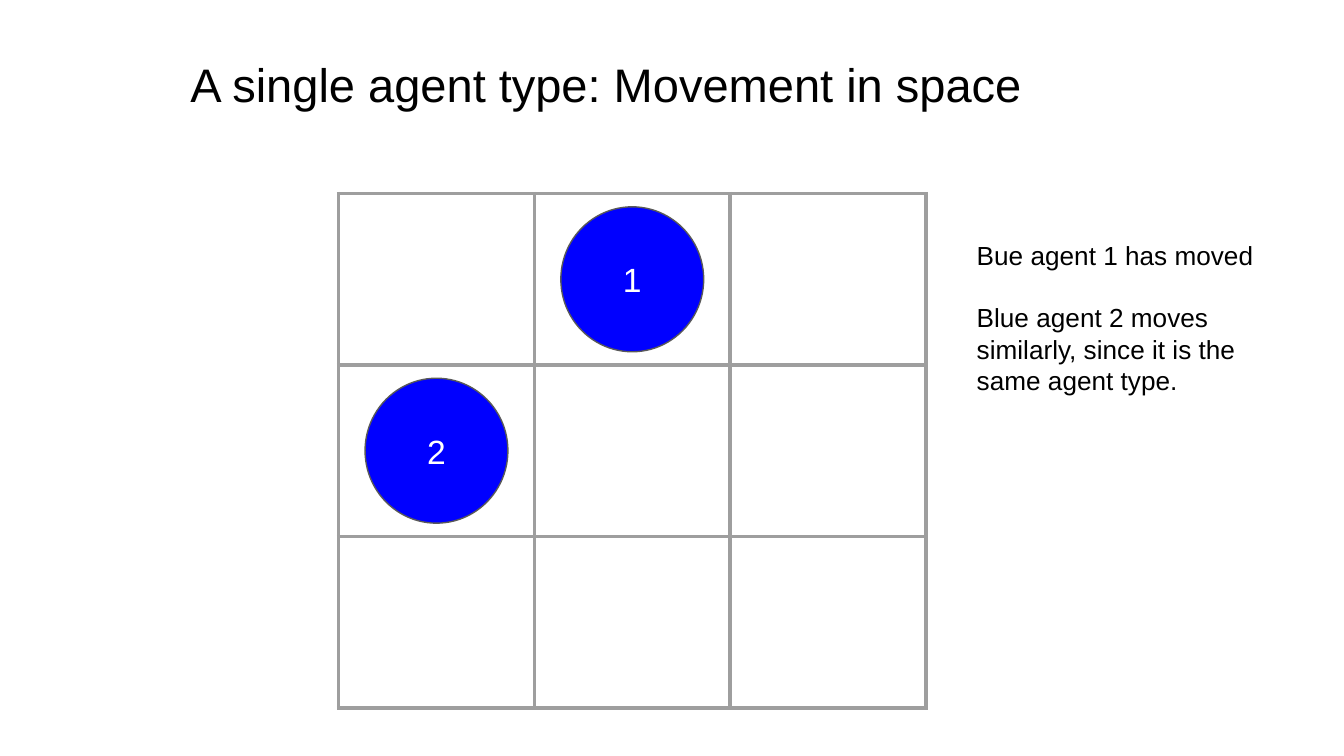
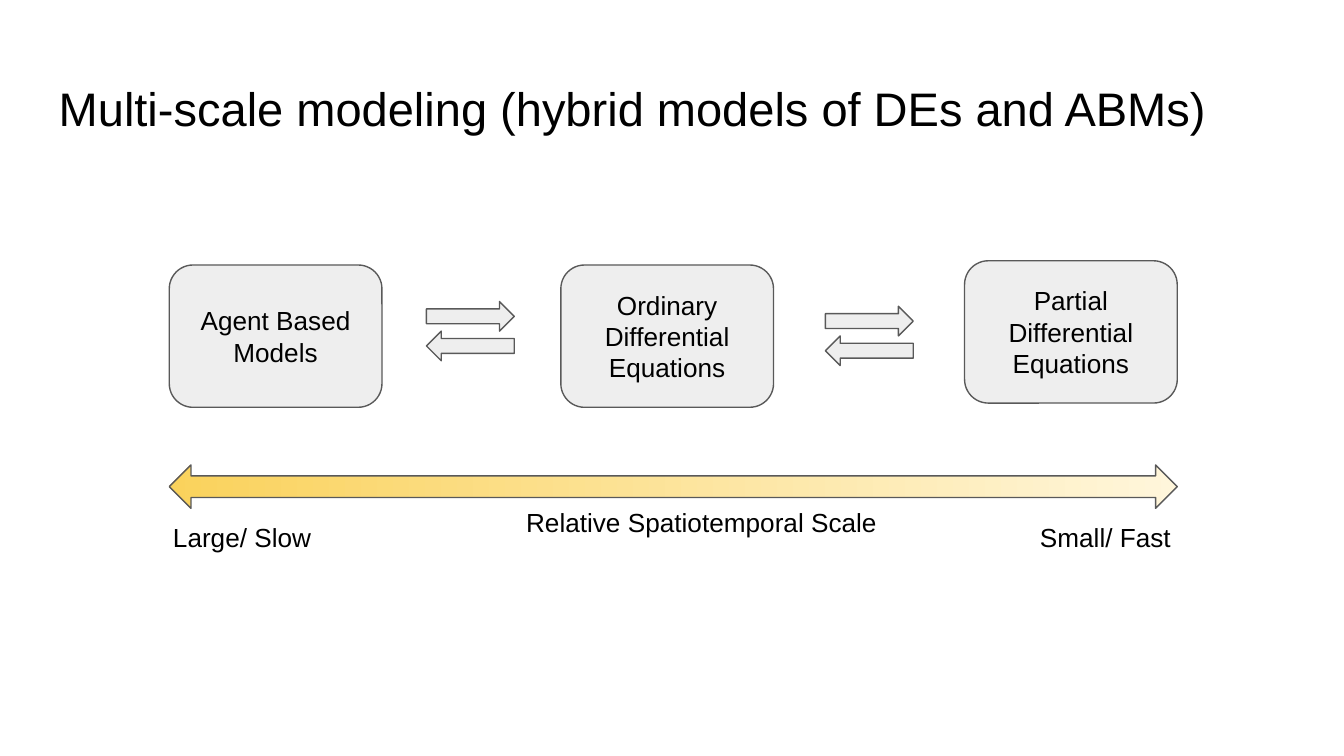
from lxml import etree
from pptx import Presentation
from pptx.dml.color import RGBColor
from pptx.enum.shapes import MSO_SHAPE
from pptx.enum.text import MSO_ANCHOR, PP_ALIGN
from pptx.oxml.ns import qn
from pptx.util import Cm, Pt

LEFT, CENTER, RIGHT = PP_ALIGN.LEFT, PP_ALIGN.CENTER, PP_ALIGN.RIGHT
TOP, MIDDLE = MSO_ANCHOR.TOP, MSO_ANCHOR.MIDDLE
OVAL, ROUNDED = MSO_SHAPE.OVAL, MSO_SHAPE.ROUNDED_RECTANGLE
LEFT_ARROW, RIGHT_ARROW = MSO_SHAPE.LEFT_ARROW, MSO_SHAPE.RIGHT_ARROW
DOUBLE_ARROW = MSO_SHAPE.LEFT_RIGHT_ARROW

FONT = "Arial"
TITLE_SIZE, AGENT_SIZE, TEXT_SIZE = 25.2, 18, 14
TITLE_ONLY = 5
COLORS = {
    "paper": "FFFFFF",
    "ink": "000000",
    "outline": "595959",
    "grid": "9E9E9E",
    "agent": "0000FF",
    "model": "EEEEEE",
    "scale_small": "FFF6DB",
    "scale_large": "FAD25C",
}


def color(name):
    return RGBColor.from_string(COLORS[name])


def write(frame, lines, size=TEXT_SIZE, ink="ink", align=LEFT, anchor=TOP,
          inset=0.25, gap=0):
    """Fill a text frame, with a gap in points between its paragraphs."""
    frame.text = "\n".join(lines)
    frame.word_wrap = True
    frame.vertical_anchor = anchor
    frame.margin_left = frame.margin_right = Cm(inset)
    frame.margin_top = frame.margin_bottom = Cm(inset)
    for index, para in enumerate(frame.paragraphs):
        para.alignment = align
        para.space_before = Pt(gap if index else 0)
        for span in para.runs:
            span.font.name = FONT
            span.font.size = Pt(size)
            span.font.color.rgb = color(ink)


def add_page(deck, title, box):
    """Add a page with its title placed in the given box."""
    page = deck.slides.add_slide(deck.slide_layouts[TITLE_ONLY])
    heading = page.shapes.title
    heading.left, heading.top, heading.width, heading.height = map(Cm, box)
    write(heading.text_frame, [title], TITLE_SIZE, anchor=MIDDLE)
    return page


def add_text(page, box, lines, **style):
    label = page.shapes.add_textbox(*map(Cm, box))
    write(label.text_frame, lines, **style)


def add_outlined(page, kind, box, fill):
    shape = page.shapes.add_shape(kind, *map(Cm, box))
    shape.shadow.inherit = False
    shape.fill.solid()
    shape.fill.fore_color.rgb = color(fill)
    shape.line.color.rgb = color("outline")
    shape.line.width = Pt(0.75)
    return shape


def set_borders(cell, name, points):
    properties = cell._tc.get_or_add_tcPr()
    for index, side in enumerate(("a:lnL", "a:lnR", "a:lnT", "a:lnB")):
        line = etree.Element(qn(side), w=str(Pt(points)))
        fill = etree.SubElement(line, qn("a:solidFill"))
        etree.SubElement(fill, qn("a:srgbClr"), val=COLORS[name])
        properties.insert(index, line)


def draw_space(page, box, count, agents):
    """Draw a square grid of cells with numbered agents centred in them."""
    left, top, width, height = box
    cell_width, cell_height = width / count, height / count
    table = page.shapes.add_table(count, count, *map(Cm, box)).table
    table.first_row = table.horz_banding = False
    for index in range(count):
        table.columns[index].width = Cm(cell_width)
        table.rows[index].height = Cm(cell_height)
    for cell in table.iter_cells():
        cell.fill.solid()
        cell.fill.fore_color.rgb = color("paper")
        set_borders(cell, "grid", 2.25)

    agent_width, agent_height = 2.7, 2.74
    for name, row, column in agents:
        place = (left + (column + 0.5) * cell_width - agent_width / 2,
                 top + (row + 0.5) * cell_height - agent_height / 2,
                 agent_width, agent_height)
        agent = add_outlined(page, OVAL, place, "agent")
        write(agent.text_frame, [name], AGENT_SIZE, "paper", CENTER, MIDDLE)


def draw_exchange(page, left, top):
    """Draw a pair of opposite arrows, one above the other."""
    width, height = 1.66, 0.56
    for index, kind in enumerate((RIGHT_ARROW, LEFT_ARROW)):
        place = (left, top + index * height, width, height)
        add_outlined(page, kind, place, "model")


def draw_scales(page, box):
    """Draw the models, their exchanges and the scale arrow below them."""
    left, top, width, height = box

    # Models
    model_width, model_height = 4.02, 2.69
    models = (
        ("Agent Based Models", 0, 0.08),
        ("Ordinary Differential Equations", 7.4, 0.08),
        ("Partial Differential Equations", width - model_width, 0),
    )
    for name, across, down in models:
        place = (left + across, top + down, model_width, model_height)
        model = add_outlined(page, ROUNDED, place, "model")
        write(model.text_frame, [name], align=CENTER, anchor=MIDDLE, inset=0.1)

    # Exchanges between neighbours
    for across, down in ((4.86, 0.77), (12.4, 0.86)):
        draw_exchange(page, left + across, top + down)

    # Scale arrow
    arrow_height = 0.82
    place = (left, top + 3.86, width, arrow_height)
    arrow = add_outlined(page, DOUBLE_ARROW, place, "scale_large")
    arrow.fill.gradient()
    arrow.fill.gradient_angle = 180
    for stop, name in zip(arrow.fill.gradient_stops,
                          ("scale_small", "scale_large")):
        stop.color.rgb = color(name)

    # Scale labels
    label_height, end_width, middle_width = 1.12, 3.15, 9.14
    end_top = top + height - label_height
    labels = (
        ("Relative Spatiotemporal Scale", 5.49, end_top - 0.27, middle_width,
         CENTER),
        ("Large/ Slow", -0.18, end_top, end_width, LEFT),
        ("Small/ Fast", width - end_width + 0.13, end_top, end_width, RIGHT),
    )
    for name, across, label_top, label_width, align in labels:
        place = (left + across, label_top, label_width, label_height)
        add_text(page, place, [name], align=align)


def build_movement(deck):
    page = add_page(deck, "A single agent type: Movement in space",
                    (3.35, 0.79, 18.26, 1.6))
    draw_space(page, (6.4, 3.66, 11.1, 9.72), 3, (("1", 0, 1), ("2", 1, 0)))
    add_text(page, (18.21, 4.27, 6.68, 4.7), [
        "Bue agent 1 has moved",
        "Blue agent 2 moves similarly, since it is the same agent type.",
    ], gap=16.8)


def build_multiscale(deck):
    page = add_page(deck, "Multi-scale modeling (hybrid models of DEs and ABMs)",
                    (0.86, 1.24, 23.67, 1.6))
    draw_scales(page, (3.2, 4.93, 19.05, 5.79))


def main():
    deck = Presentation()
    deck.slide_width, deck.slide_height = Cm(25.4), Cm(14.29)
    build_movement(deck)
    build_multiscale(deck)
    deck.save("out.pptx")


if __name__ == "__main__":
    main()
